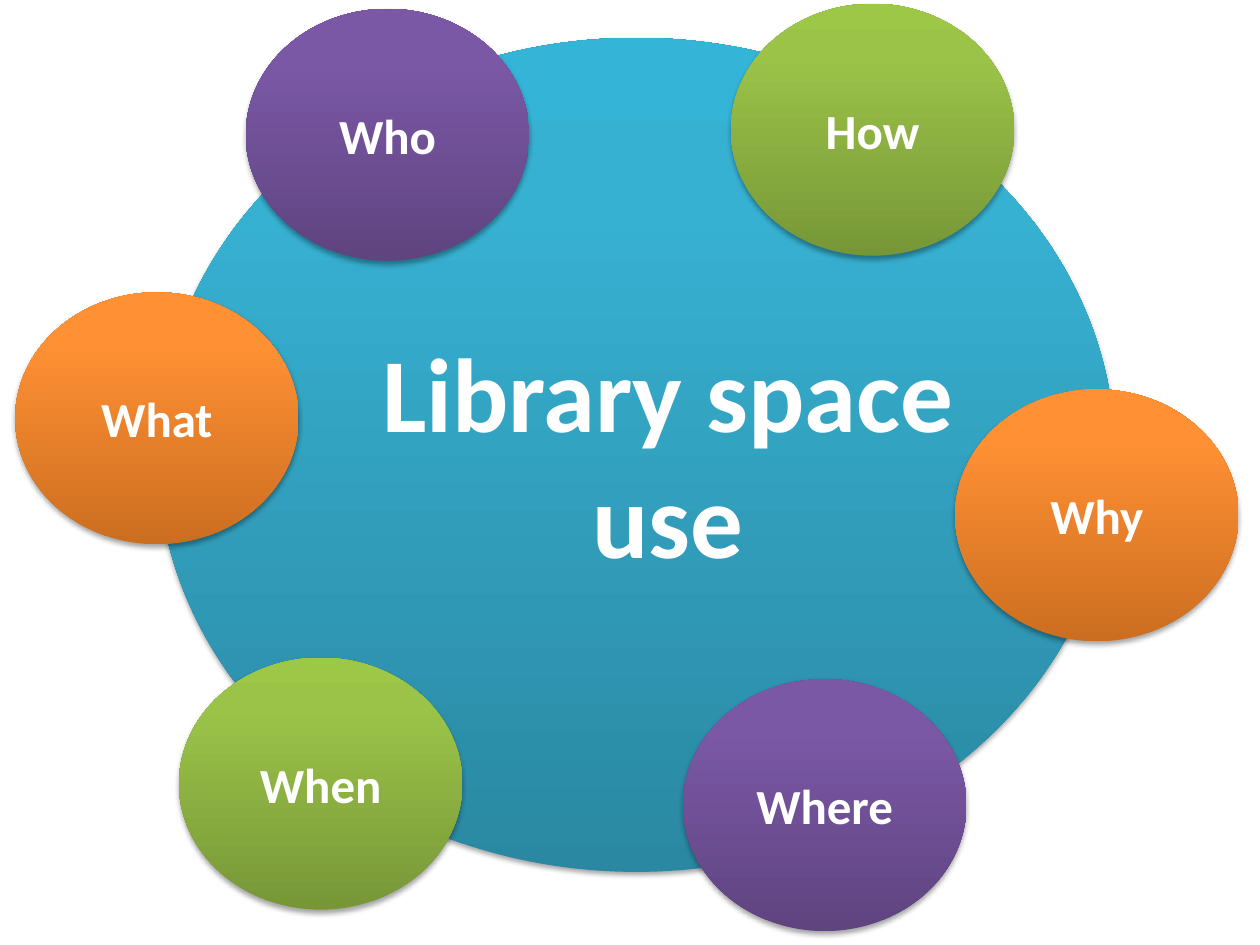
from copy import deepcopy
from dataclasses import dataclass

from lxml.etree import SubElement
from pptx import Presentation
from pptx.dml.color import RGBColor
from pptx.enum.shapes import MSO_SHAPE
from pptx.enum.text import MSO_ANCHOR, MSO_AUTO_SIZE, PP_ALIGN
from pptx.oxml.ns import qn
from pptx.util import Inches, Pt


@dataclass(frozen=True)
class Theme:
    """Fonts, type sizes and gradient colours of the slide."""
    font: str = "Calibri"
    title_size: int = 60
    label_size: int = 28
    text: str = "FFFFFF"
    shadow: str = "000000"
    teal: tuple = ("2A88A2", "37B1D2", "34B4D6")
    orange: tuple = ("CC6E20", "FF9034", "FF9136")
    purple: tuple = ("5F4480", "7B58A6", "7C57A8")
    green: tuple = ("779737", "9BC348", "9DC746")


THEME = Theme()
STOP_POSITIONS = (0, 0.8, 1)
BUBBLE_SIZE = (2.25, 2)
BUBBLES = (
    ("What", 0.12, 2.32, THEME.orange),
    ("Why", 7.58, 3.09, THEME.orange),
    ("Where", 5.42, 5.39, THEME.purple),
    ("When", 1.42, 5.22, THEME.green),
    ("How", 5.8, 0.03, THEME.green),
    ("Who", 1.95, 0.07, THEME.purple),
)


def fill_gradient(shape, colors):
    """Fill the shape with a three-stop gradient, darkest at the bottom."""
    shape.fill.gradient()
    shape.fill.gradient_angle = 90
    stop_list = shape._element.spPr.find(f".//{qn('a:gsLst')}")
    stop_list.append(deepcopy(stop_list[0]))
    for stop, position, color in zip(shape.fill.gradient_stops, STOP_POSITIONS, colors):
        stop.position = position
        stop.color.rgb = RGBColor.from_string(color)


def add_shadow(shape):
    """Give the shape a soft shadow falling straight down."""
    shape.shadow.inherit = False
    effects = shape._element.spPr.find(qn("a:effectLst"))
    shadow = SubElement(effects, qn("a:outerShdw"), blurRad=str(Pt(3.1)),
                        dist=str(Pt(1.8)), dir="5400000", rotWithShape="0")
    color = SubElement(shadow, qn("a:srgbClr"), val=THEME.shadow)
    SubElement(color, qn("a:alpha"), val="35000")


def write_text(shape, text, size):
    """Write bold centred text in the middle of the shape."""
    frame = shape.text_frame
    frame.text = text
    frame.word_wrap = True
    frame.auto_size = MSO_AUTO_SIZE.NONE
    frame.vertical_anchor = MSO_ANCHOR.MIDDLE
    paragraph = frame.paragraphs[0]
    paragraph.alignment = PP_ALIGN.CENTER
    font = paragraph.runs[0].font
    font.name, font.size, font.bold = THEME.font, Pt(size), True
    font.color.rgb = RGBColor.from_string(THEME.text)


def add_ellipse(slide, box, colors):
    """Add a shaded ellipse filling the box."""
    ellipse = slide.shapes.add_shape(MSO_SHAPE.OVAL, *map(Inches, box))
    fill_gradient(ellipse, colors)
    ellipse.line.fill.background()
    add_shadow(ellipse)
    return ellipse


def build_hub(slide, box):
    """Place the central ellipse with the slide title on top of it."""
    left, top, width, height = box
    hub = add_ellipse(slide, box, THEME.teal)
    title = slide.shapes.title
    title._element.addprevious(hub._element)
    title.left, title.top = Inches(left + 1.55), Inches(top + 2.15)
    title.width, title.height = Inches(width - 2.6), Inches(height - 4.32)
    write_text(title, "Library space use", THEME.title_size)


def build_bubble(slide, box, label, colors):
    """Place one labelled question bubble."""
    write_text(add_ellipse(slide, box, colors), label, THEME.label_size)


def main():
    """Build and save the slide."""
    presentation = Presentation()
    presentation.slide_width, presentation.slide_height = Inches(10), Inches(7.5)
    slide = presentation.slides.add_slide(presentation.slide_layouts[5])
    build_hub(slide, (1.25, 0.3, 7.6, 6.62))
    for label, left, top, colors in BUBBLES:
        build_bubble(slide, (left, top, *BUBBLE_SIZE), label, colors)
    presentation.save("out.pptx")


if __name__ == "__main__":
    main()
